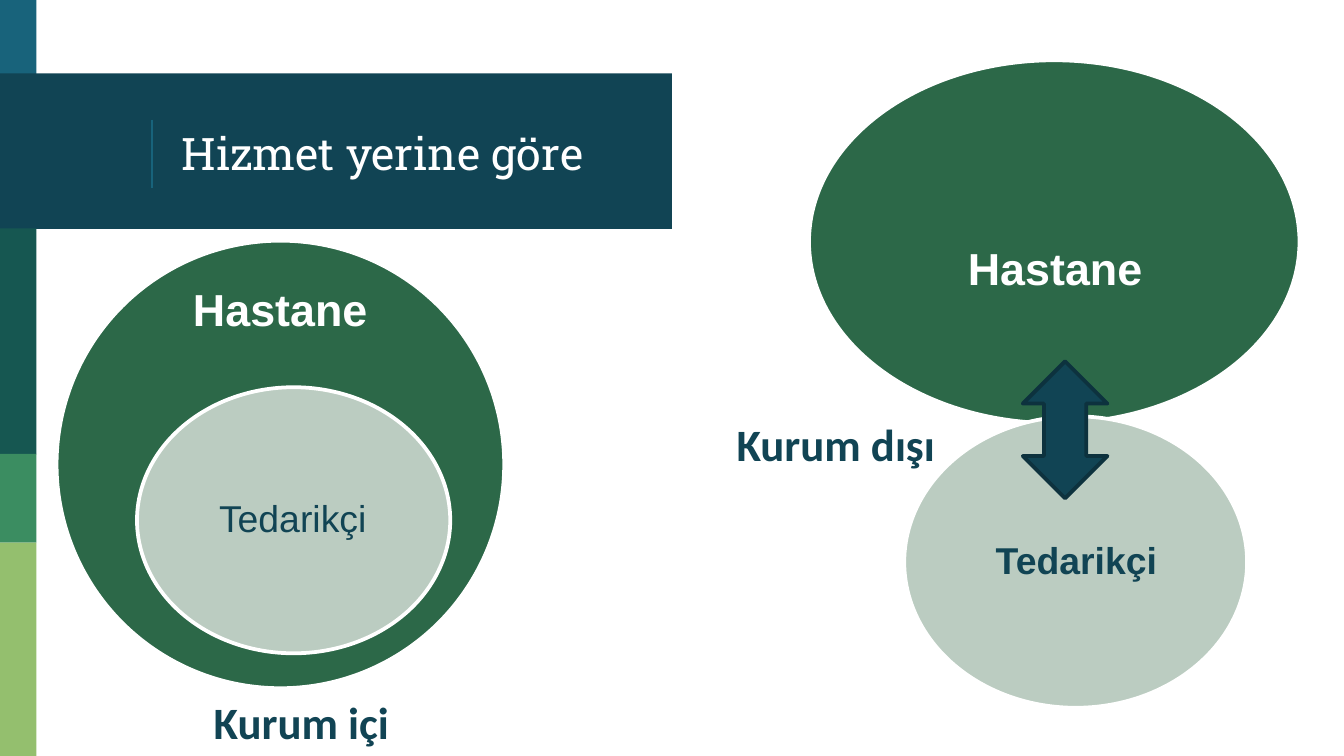
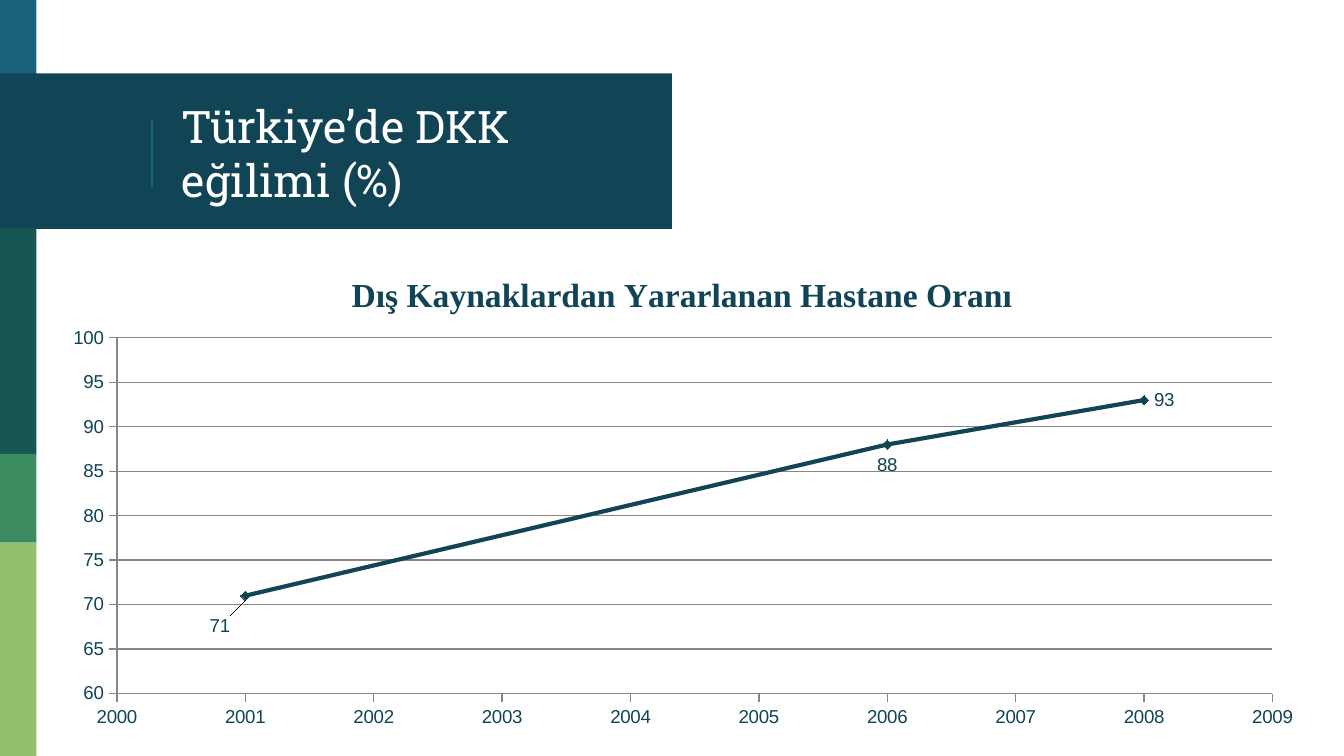
from dataclasses import dataclass

from lxml import etree
from pptx import Presentation
from pptx import util as u
from pptx.chart import data as chart_data
from pptx.dml.color import RGBColor
from pptx.enum import chart as ch, shapes, text
from pptx.oxml import ns

Cm, Pt = u.Cm, u.Pt


@dataclass(frozen=True)
class Theme:
    navy: str = "114454"
    navy_dark: str = "0D323E"
    blue: str = "18637B"
    teal: str = "165751"
    green: str = "3B8D61"
    lime: str = "94BF6E"
    forest: str = "2C6848"
    sage: str = "BBCCC1"
    grey: str = "868686"
    white: str = "FFFFFF"
    title_font: str = "Roboto Slab"
    body_font: str = "Arial"
    caption_font: str = "Calibri"
    chart_title_font: str = "Times New Roman"
    large: int = 24
    medium: int = 20
    chart_title: int = 18
    small: int = 10


def cm(*values):
    return [Cm(v) for v in values]


def set_font(font, name, size, color, bold=False):
    font.name, font.size, font.bold = name, Pt(size), bold
    font.color.rgb = RGBColor.from_string(color)


def set_line(line, color, width):
    line.color.rgb = RGBColor.from_string(color)
    line.width = Pt(width)


def add_layout(parent, index, **fractions):
    """Put a manual chart layout into parent, replacing any there."""
    for old in parent.findall(ns.qn("c:layout")):
        parent.remove(old)
    layout = etree.Element(ns.qn("c:layout"))
    manual = etree.SubElement(layout, ns.qn("c:manualLayout"))
    for tag, value in fractions.items():
        etree.SubElement(manual, ns.qn(f"c:{tag}"), val=str(value))
    parent.insert(index, layout)


class Deck:
    def __init__(self, theme):
        self.t = theme
        self.prs = Presentation()
        self.prs.slide_width, self.prs.slide_height = cm(25.4, 14.29)
        self.s = None

    def slide(self, title):
        self.s = self.prs.slides.add_slide(self.prs.slide_layouts[5])
        self.frame()
        self.title(title)

    def frame(self):
        """Side strip, title band and the thin rule beside the title."""
        t, rect = self.t, shapes.MSO_SHAPE.RECTANGLE
        for box, color in (
            ((0, 0, 0.69, 1.47), t.blue),
            ((0, 1.39, 12.7, 2.94), t.navy),
            ((0, 4.32, 0.69, 4.27), t.teal),
            ((0, 8.58, 0.69, 1.68), t.green),
            ((0, 10.26, 0.69, 4.03), t.lime),
        ):
            self.shape(rect, box, color)
        rule = self.s.shapes.add_connector(
            shapes.MSO_CONNECTOR.STRAIGHT, *cm(2.87, 2.26, 2.87, 3.56))
        set_line(rule.line, t.blue, 0.75)
        etree.SubElement(rule.element.spPr, ns.qn("a:effectLst"))

    def title(self, words):
        sp = self.s.shapes.title
        sp.left, sp.top, sp.width, sp.height = cm(3.18, 1.47, 8.92, 2.84)
        sp.element.getparent().append(sp.element)  # in front of the band
        p = self.fill_text(sp.text_frame, words, 0.25)
        p.alignment = text.PP_ALIGN.LEFT
        set_font(p.font, self.t.title_font, self.t.large, self.t.white)

    def fill_text(self, tf, words, inset):
        tf.text = words
        tf.word_wrap = True
        tf.auto_size = text.MSO_AUTO_SIZE.NONE
        tf.vertical_anchor = text.MSO_ANCHOR.MIDDLE
        tf.margin_left = tf.margin_right = Cm(inset)
        tf.margin_top = tf.margin_bottom = Cm(inset)
        return tf.paragraphs[0]

    def shape(self, kind, box, fill, line=None, parent=None):
        sp = (parent or self.s).shapes.add_shape(kind, *cm(*box))
        sp.shadow.inherit = False
        sp.fill.solid()
        sp.fill.fore_color.rgb = RGBColor.from_string(fill)
        if line:
            set_line(sp.line, line, 2)
        else:
            sp.line.fill.background()

    def ovals(self, *items):
        """Group of ovals, each with its label: box, fill, label box, words, size, color, bold."""
        group = self.s.shapes.add_group_shape()
        for box, fill, label_box, words, size, color, bold in items:
            self.shape(shapes.MSO_SHAPE.OVAL, box, fill, self.t.white, group)
            label = group.shapes.add_textbox(*cm(*label_box))
            p = self.fill_text(label.text_frame, words, 0.4)
            p.alignment = text.PP_ALIGN.CENTER
            p.line_spacing = 0.9
            set_font(p.font, self.t.body_font, size, color, bold)

    def caption(self, left, top, words, align):
        tf = self.s.shapes.add_textbox(*cm(left, top, 5.59, 1.27)).text_frame
        tf.word_wrap = True
        tf.auto_size = text.MSO_AUTO_SIZE.SHAPE_TO_FIT_TEXT
        tf.text = words
        p = tf.paragraphs[0]
        p.alignment = align
        set_font(p.font, self.t.caption_font, self.t.large, self.t.navy, True)

    def trend_chart(self, box, title, points, x_range, y_range):
        """Scatter line chart; points are (x, y, label position)."""
        t = self.t
        data = chart_data.XyChartData()
        series_data = data.add_series("Series 1")
        for x, y, _ in points:
            series_data.add_data_point(x, y)
        chart = self.s.shapes.add_chart(
            ch.XL_CHART_TYPE.XY_SCATTER_LINES, *cm(*box), data).chart
        set_font(chart.font, t.body_font, t.small, t.navy)
        chart.has_legend = False
        chart.has_title = True
        tf = chart.chart_title.text_frame
        tf.text = title
        set_font(tf.paragraphs[0].font, t.chart_title_font, t.chart_title, t.navy, True)
        chart.chart_title.include_in_layout = False

        for axis, (low, high, step), grid in (
            (chart.category_axis, x_range, False),
            (chart.value_axis, y_range, True),
        ):
            axis.minimum_scale, axis.maximum_scale, axis.major_unit = low, high, step
            axis.has_major_gridlines = grid
            axis.major_tick_mark = ch.XL_TICK_MARK.OUTSIDE
            axis.minor_tick_mark = ch.XL_TICK_MARK.NONE
            axis.tick_labels.number_format = "0"
            axis.tick_labels.number_format_is_linked = False
            set_line(axis.format.line, t.grey, 0.75)
        set_line(chart.value_axis.major_gridlines.format.line, t.grey, 0.75)

        plot = chart.plots[0]
        plot.vary_by_categories = False
        series = plot.series[0]
        set_line(series.format.line, t.navy, 2.25)
        marker = series.marker
        marker.style, marker.size = ch.XL_MARKER_STYLE.DIAMOND, 5
        marker.format.fill.solid()
        marker.format.fill.fore_color.rgb = RGBColor.from_string(t.navy)
        set_line(marker.format.line, t.navy, 0.75)
        for i, (_, _, position) in enumerate(points):
            series.points[i].data_label.position = position

        add_layout(chart.element.xpath(".//c:plotArea")[0], 0,
                   layoutTarget="inner", xMode="edge", yMode="edge",
                   x=0.055, y=0.178, w=0.91, h=0.732)
        add_layout(chart.element.xpath(".//c:dLbl")[0], 1, x=-0.02, y=0.02)


def service_place(deck):
    t, align = deck.t, text.PP_ALIGN
    deck.slide("Hizmet yerine göre")
    deck.ovals(
        ((1.07, 4.55, 8.46, 8.46), t.forest, (3.07, 5.18, 4.45, 1.45),
         "Hastane", t.large, t.white, True),
        ((2.59, 7.32, 5.92, 5.03), t.sage, (3.45, 8.59, 4.17, 2.51),
         "Tedarikçi", t.medium, t.navy, False),
    )
    deck.ovals(
        ((15.29, 1.14, 9.27, 6.86), t.forest, (17.5, 4.4, 4.88, 1.45),
         "Hastane", t.large, t.white, True),
        ((17.09, 7.87, 6.48, 5.51), t.sage, (18.06, 9.25, 4.57, 2.77),
         "Tedarikçi", t.medium, t.navy, True),
    )
    deck.shape(shapes.MSO_SHAPE.UP_DOWN_ARROW, (19.33, 6.83, 1.6, 2.59),
               t.navy, t.navy_dark)
    deck.caption(2.9, 13, "Kurum içi", align.CENTER)
    deck.caption(13.67, 7.75, "Kurum dışı", align.LEFT)


def outsourcing_trend(deck):
    pos = ch.XL_LABEL_POSITION
    deck.slide("Türkiye’de DKK eğilimi (%)")
    deck.trend_chart(
        (0.89, 4.75, 24, 9.19),
        "Dış Kaynaklardan Yararlanan Hastane Oranı",
        [(2001, 71, pos.BELOW), (2006, 88, pos.BELOW), (2008, 93, pos.RIGHT)],
        x_range=(2000, 2009, 1), y_range=(60, 100, 5))


def main():
    deck = Deck(Theme())
    service_place(deck)
    outsourcing_trend(deck)
    deck.prs.save("out.pptx")


if __name__ == "__main__":
    main()
